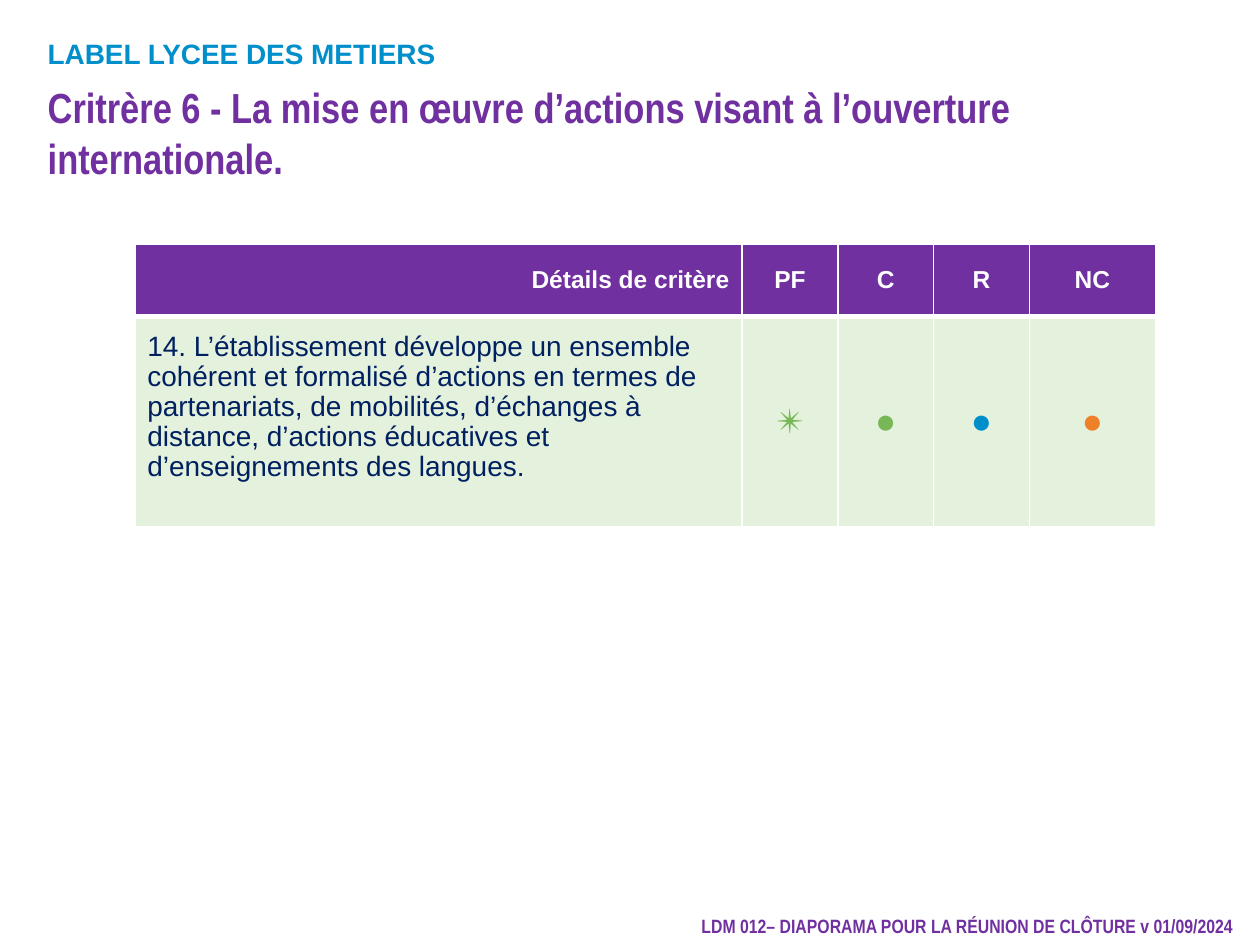
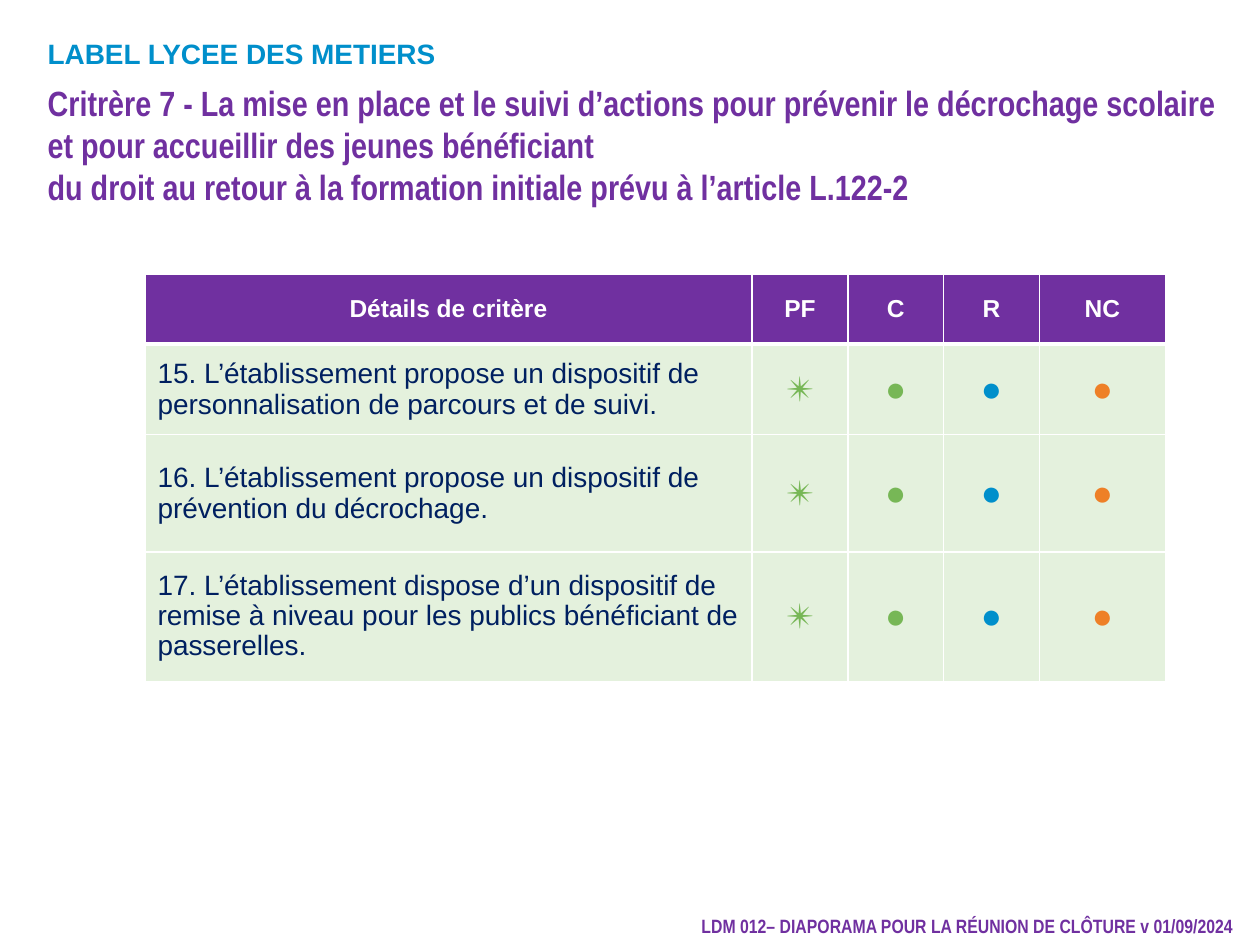
from dataclasses import dataclass

from lxml import etree
from pptx import Presentation
from pptx.dml.color import RGBColor
from pptx.enum.text import MSO_ANCHOR, PP_ALIGN
from pptx.oxml.ns import qn
from pptx.slide import Slide
from pptx.table import _Cell
from pptx.text.text import TextFrame
from pptx.util import Inches, Pt

PURPLE = RGBColor(0x70, 0x30, 0xA0)
BLUE = RGBColor(0x00, 0x8F, 0xCB)
NAVY = RGBColor(0x00, 0x20, 0x60)
GREEN = RGBColor(0x77, 0xB7, 0x56)
ORANGE = RGBColor(0xEE, 0x80, 0x27)
PALE_GREEN = RGBColor(0xE4, 0xF1, 0xDD)
WHITE = RGBColor(0xFF, 0xFF, 0xFF)

LEFT = PP_ALIGN.LEFT
CENTER = PP_ALIGN.CENTER
RIGHT = PP_ALIGN.RIGHT
MIDDLE = MSO_ANCHOR.MIDDLE

LABEL = "LABEL LYCEE DES METIERS"
FOOTER = "LDM 012– DIAPORAMA POUR LA RÉUNION DE CLÔTURE v 01/09/2024"
DETAILS_HEADER = "Détails de critère"
COLUMN_WIDTHS = (4.82, 0.76, 0.76, 0.76, 1.0)
THIN_BORDER = 1
THICK_BORDER = 3


@dataclass(frozen=True)
class TextStyle:
    size: float
    color: RGBColor
    font: str = "Arial"
    bold: bool = True
    align: PP_ALIGN = LEFT
    line_spacing: float = 1.0


@dataclass(frozen=True)
class Rating:
    name: str
    symbol: str
    color: RGBColor


@dataclass(frozen=True)
class Detail:
    text: str
    height: float
    line_spacing: float = 1.0
    extra_bottom: float = 0.0


@dataclass(frozen=True)
class Criterion:
    title: str
    title_size: float
    title_width: float
    table_left: float
    table_top: float
    header_height: float
    header_align: PP_ALIGN
    details: tuple[Detail, ...]


RATINGS = (
    Rating("PF", "✴", GREEN),
    Rating("C", "●", GREEN),
    Rating("R", "●", BLUE),
    Rating("NC", "●", ORANGE),
)

CRITERIA = (
    Criterion(
        "Critrère 6 - La mise en œuvre d’actions visant à l’ouverture internationale.",
        24, 9.29, 1.07, 1.94, 0.57, RIGHT,
        (
            Detail(
                "14. L’établissement développe un ensemble cohérent et formalisé "
                "d’actions en termes de partenariats, de mobilités, d’échanges à "
                "distance, d’actions éducatives et d’enseignements des langues.",
                1.67, 0.96, 0.22,
            ),
        ),
    ),
    Criterion(
        "Critrère 7 - La mise en place et le suivi d’actions pour prévenir le "
        "décrochage scolaire et pour accueillir des jeunes bénéﬁciant\n"
        "du droit au retour à la formation initiale prévu à l’article L.122-2",
        20, 9.72, 1.15, 2.18, 0.55, CENTER,
        (
            Detail(
                "15. L’établissement propose un dispositif de personnalisation "
                "de parcours et de suivi.",
                0.72,
            ),
            Detail(
                "16. L’établissement propose un dispositif de prévention du décrochage.",
                0.93,
            ),
            Detail(
                "17. L’établissement dispose d’un dispositif de remise à niveau "
                "pour les publics bénéﬁciant de\npasserelles.",
                1.03, 0.96,
            ),
        ),
    ),
)


def write_text(text_frame: TextFrame, text: str, style: TextStyle) -> None:
    text_frame.text = text
    text_frame.word_wrap = True
    for paragraph in text_frame.paragraphs:
        paragraph.alignment = style.align
        paragraph.line_spacing = style.line_spacing
        for run in paragraph.runs:
            run.font.name = style.font
            run.font.size = Pt(style.size)
            run.font.bold = style.bold
            run.font.color.rgb = style.color


def add_text(
    slide: Slide, left: float, top: float, width: float, height: float,
    text: str, style: TextStyle,
) -> None:
    box = slide.shapes.add_textbox(
        Inches(left), Inches(top), Inches(width), Inches(height)
    )
    write_text(box.text_frame, text, style)


def set_borders(cell: _Cell, top: float, bottom: float) -> None:
    properties = cell._tc.get_or_add_tcPr()
    widths = {"lnL": THIN_BORDER, "lnR": THIN_BORDER, "lnT": top, "lnB": bottom}
    for side, width in widths.items():
        line = etree.SubElement(properties, qn(f"a:{side}"), w=str(Pt(width)))
        fill = etree.SubElement(line, qn("a:solidFill"))
        etree.SubElement(fill, qn("a:srgbClr"), val=str(WHITE))


def format_cell(
    cell: _Cell, text: str, style: TextStyle, fill: RGBColor,
    top: float, bottom: float,
) -> None:
    set_borders(cell, top, bottom)
    cell.fill.solid()
    cell.fill.fore_color.rgb = fill
    cell.vertical_anchor = MIDDLE
    write_text(cell.text_frame, text, style)


def add_criterion_table(slide: Slide, criterion: Criterion) -> None:
    heights = [criterion.header_height, *(d.height for d in criterion.details)]
    table = slide.shapes.add_table(
        len(heights), len(COLUMN_WIDTHS),
        Inches(criterion.table_left), Inches(criterion.table_top),
        Inches(sum(COLUMN_WIDTHS)), Inches(sum(heights)),
    ).table
    table.horz_banding = False
    for column, width in zip(table.columns, COLUMN_WIDTHS):
        column.width = Inches(width)
    for row, height in zip(table.rows, heights):
        row.height = Inches(height)

    headers = [DETAILS_HEADER, *(rating.name for rating in RATINGS)]
    for index, header in enumerate(headers):
        align = CENTER if index else criterion.header_align
        format_cell(
            table.cell(0, index), header, TextStyle(14, WHITE, align=align),
            PURPLE, THIN_BORDER, THICK_BORDER,
        )

    for row_index, detail in enumerate(criterion.details, start=1):
        top = THICK_BORDER if row_index == 1 else THIN_BORDER
        detail_cell = table.cell(row_index, 0)
        detail_style = TextStyle(
            16, NAVY, bold=False, line_spacing=detail.line_spacing
        )
        format_cell(
            detail_cell, detail.text, detail_style, PALE_GREEN, top, THIN_BORDER
        )
        detail_cell.margin_bottom = Inches(0.05 + detail.extra_bottom)
        for column_index, rating in enumerate(RATINGS, start=1):
            format_cell(
                table.cell(row_index, column_index), rating.symbol,
                TextStyle(20, rating.color, bold=False, align=CENTER),
                PALE_GREEN, top, THIN_BORDER,
            )


def add_criterion_slide(slide: Slide, criterion: Criterion) -> None:
    add_text(
        slide, 3.19, 7.21, 6.7, 0.29, FOOTER,
        TextStyle(11, PURPLE, "Arial Narrow", align=RIGHT),
    )
    add_text(slide, 0.28, 0.24, 3.94, 0.37, LABEL, TextStyle(16, BLUE))
    add_criterion_table(slide, criterion)
    add_text(
        slide, 0.28, 0.6, criterion.title_width, 0.82, criterion.title,
        TextStyle(criterion.title_size, PURPLE, "Arial Narrow"),
    )


def main() -> None:
    presentation = Presentation()
    presentation.slide_width = Inches(10)
    presentation.slide_height = Inches(7.5)
    blank_layout = presentation.slide_layouts[6]
    for criterion in CRITERIA:
        add_criterion_slide(presentation.slides.add_slide(blank_layout), criterion)
    presentation.save("out.pptx")


if __name__ == "__main__":
    main()
